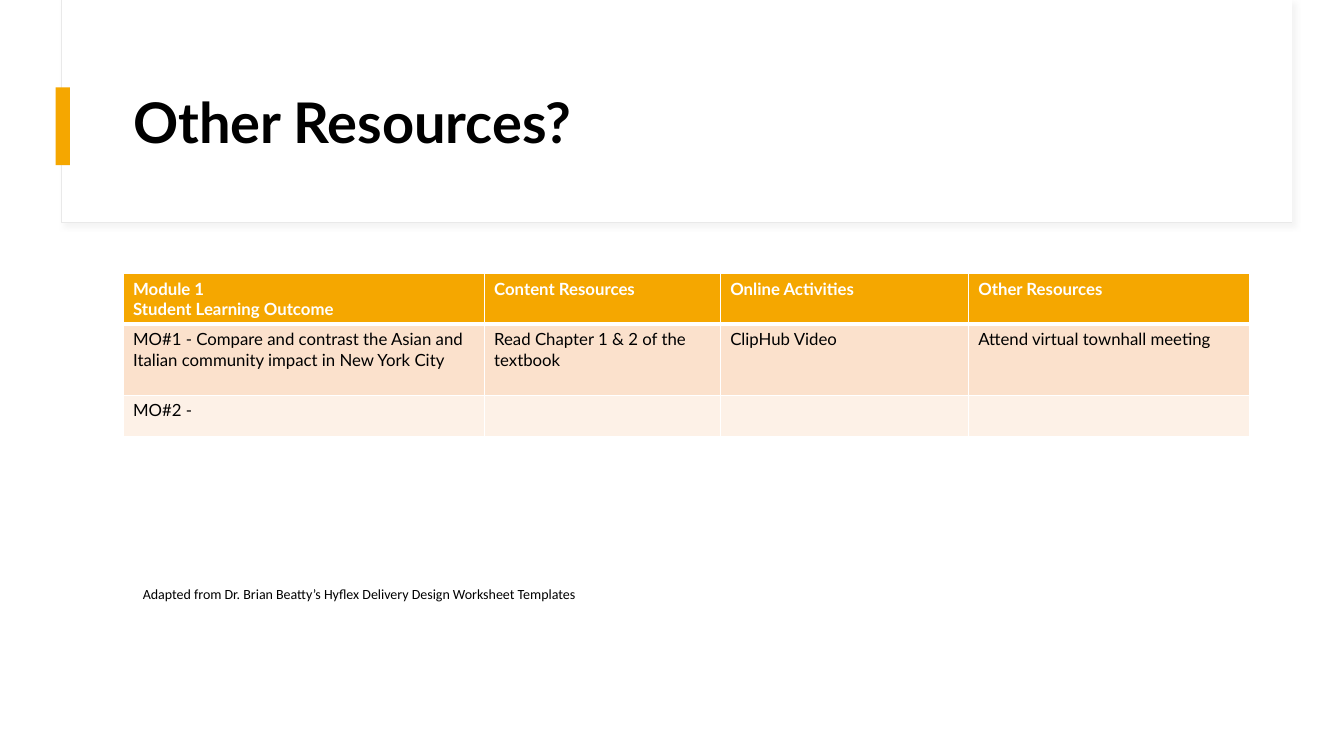
from lxml import etree
from pptx import Presentation
from pptx import util as u
from pptx.dml.color import RGBColor
from pptx.enum import shapes, text
from pptx.oxml import ns

# Palette
WHITE = RGBColor(0xFF, 0xFF, 0xFF)
BLACK = RGBColor(0x00, 0x00, 0x00)
ORANGE = RGBColor(0xF5, 0xA7, 0x00)
PEACH = RGBColor(0xFB, 0xE1, 0xCC)
PALE_PEACH = RGBColor(0xFD, 0xF1, 0xE7)
FRAME_GREY = RGBColor(0xE9, 0xE9, 0xE9)
SHADOW_GREY = RGBColor(0xD9, 0xD9, 0xD9)


def add_xml(parent, tag, **attributes):
    return etree.SubElement(parent, ns.qn(tag), attributes)


def write(tf, content, font="Lato", size=12, color=BLACK, bold=False, spacing=None):
    """Fill a text frame, one paragraph per line of content."""
    tf.word_wrap = True
    for i, line in enumerate(content.split("\n")):
        p = tf.paragraphs[0] if i == 0 else tf.add_paragraph()
        p.alignment = text.PP_ALIGN.LEFT
        p.line_spacing = spacing
        p.font.size = u.Pt(size)
        if line:
            r = p.add_run()
            r.text = line
            r.font.name, r.font.size = font, u.Pt(size)
            r.font.bold, r.font.color.rgb = bold, color


class Deck:
    def __init__(self, width, height):
        self.prs = Presentation()
        self.prs.slide_width, self.prs.slide_height = u.Cm(width), u.Cm(height)
        self.s = self.prs.slides.add_slide(self.prs.slide_layouts[5])

    def rect(self, box, fill, line=None, shadow=None):
        sp = self.s.shapes.add_shape(shapes.MSO_SHAPE.RECTANGLE, *map(u.Cm, box))
        sp.shadow.inherit = False
        sp.fill.solid()
        sp.fill.fore_color.rgb = fill
        if line is None:
            sp.line.fill.background()
        else:
            sp.line.color.rgb, sp.line.width = line, u.Pt(0.75)
        if shadow is not None:
            effects = sp._element.spPr.find(ns.qn("a:effectLst"))
            outer = add_xml(effects, "a:outerShdw", blurRad=str(u.Pt(4)),
                            dist=str(u.Pt(3)), dir="2700000", algn="tl")
            color = add_xml(outer, "a:srgbClr", val=str(shadow))
            add_xml(color, "a:alpha", val="30000")

    def title(self, box, content):
        sp = self.s.shapes.title
        sp.left, sp.top, sp.width, sp.height = map(u.Cm, box)
        sp.text_frame.vertical_anchor = text.MSO_ANCHOR.MIDDLE
        sp.text_frame.auto_size = text.MSO_AUTO_SIZE.NONE
        write(sp.text_frame, content, size=40, bold=True, spacing=0.9)
        # Bring the title in front of the frame
        self.s.shapes._spTree.append(sp._element)

    def label(self, box, content, **style):
        sp = self.s.shapes.add_textbox(*map(u.Cm, box))
        write(sp.text_frame, content, **style)

    def borders(self, cell, above, below):
        tcPr = cell._tc.get_or_add_tcPr()
        for side, width in (("L", 1), ("R", 1), ("T", above), ("B", below)):
            ln = add_xml(tcPr, "a:ln" + side, w=str(u.Pt(width)))
            add_xml(add_xml(ln, "a:solidFill"), "a:srgbClr", val=str(WHITE))

    def table(self, left, top, widths, heights, rows, fills):
        frame = self.s.shapes.add_table(
            len(rows), len(widths), u.Cm(left), u.Cm(top),
            u.Cm(sum(widths)), u.Cm(sum(heights)))
        table = frame.table
        for column, width in zip(table.columns, widths):
            column.width = u.Cm(width)
        for i, (row, height) in enumerate(zip(table.rows, heights)):
            row.height = u.Cm(height)
            header = i == 0
            for cell, content in zip(row.cells, rows[i]):
                self.borders(cell, 3 if i == 1 else 1, 3 if header else 1)
                cell.fill.solid()
                cell.fill.fore_color.rgb = fills[i]
                write(cell.text_frame, content, bold=header,
                      color=WHITE if header else BLACK)


def main():
    deck = Deck(33.87, 19.05)

    # Title panel with accent bar
    deck.rect((1.55, 0, 31.01, 5.61), WHITE, line=FRAME_GREY, shadow=SHADOW_GREY)
    deck.rect((1.57, 0, 30.99, 5.59), WHITE)
    deck.rect((1.4, 2.2, 0.36, 1.96), ORANGE)
    deck.title((3.1, 1.52, 28.24, 3.28), "Other Resources?")

    # Resources for each module outcome
    deck.table(
        3.1, 6.9, [9.1, 5.95, 6.25, 7.1], [1.24, 1.79, 1.04],
        [["Module 1\nStudent Learning Outcome", "Content Resources",
          "Online Activities", "Other Resources"],
         ["MO#1 - Compare and contrast the Asian and Italian community "
          "impact in New York City",
          "Read Chapter 1 & 2 of the textbook", "ClipHub Video",
          "Attend virtual townhall meeting"],
         ["MO#2 -", "", "", ""]],
        [ORANGE, PEACH, PALE_PEACH])

    # Credit line
    deck.label((3.35, 14.63, 23.83, 1.45),
               "Adapted from Dr. Brian Beatty’s Hyflex Delivery Design "
               "Worksheet Templates", font="Calibri", size=10)

    deck.prs.save("out.pptx")


if __name__ == "__main__":
    main()
